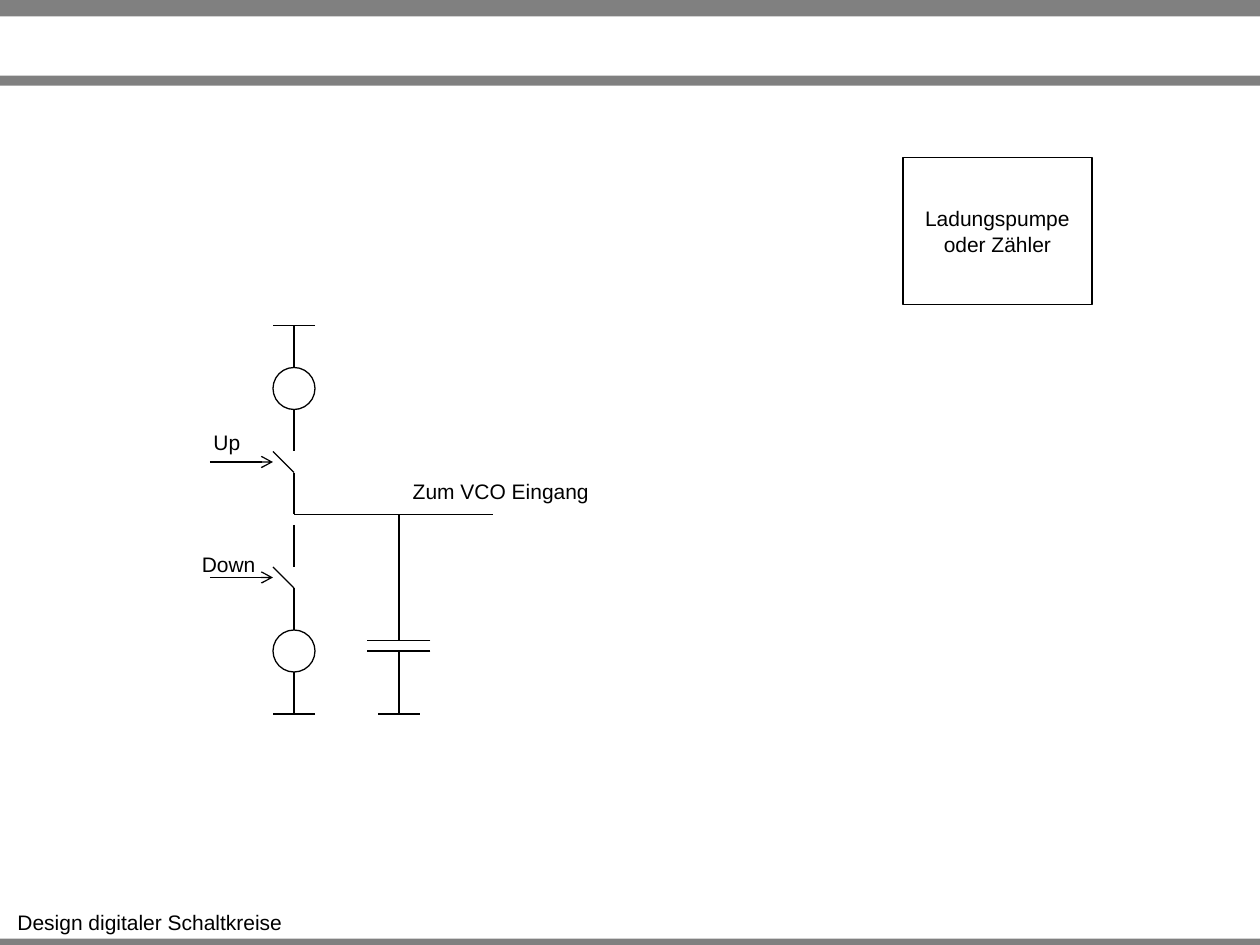
from typing import NamedTuple

from pptx import Presentation
from pptx.dml.color import RGBColor
from pptx.enum.shapes import MSO_CONNECTOR, MSO_SHAPE as Preset
from pptx.enum.text import MSO_ANCHOR, MSO_AUTO_SIZE, PP_ALIGN
from pptx.oxml.ns import qn
from pptx.util import Inches, Pt

UNIT = 1 / 12  # grid step in inches
BLACK, GRAY = "000000", "808080"


class Wire(NamedTuple):
    x1: float
    y1: float
    x2: float
    y2: float
    arrow: bool = False


class Label(NamedTuple):
    text: str
    left: float  # inches
    top: float
    width: float


def color(hex_value: str) -> RGBColor:
    return RGBColor.from_string(hex_value)


def grid(steps: float) -> int:
    return Inches(steps * UNIT)


def write(shape, text: str) -> None:
    shape.text_frame.text = text
    for paragraph in shape.text_frame.paragraphs:
        paragraph.alignment = PP_ALIGN.CENTER
        font = paragraph.runs[0].font
        font.name, font.size = "Arial", Pt(12)
        font.color.rgb = color(BLACK)


def draw_bar(slide, top: float, height: float) -> None:
    bar = slide.shapes.add_shape(
        Preset.RECTANGLE, 0, Inches(top), Inches(10), Inches(height))
    bar.shadow.inherit = False
    bar.fill.solid()
    bar.fill.fore_color.rgb = color(GRAY)
    bar.line.fill.background()


def draw_outline(slide, preset, col: float, row: float, cols: float, rows: float):
    outline = slide.shapes.add_shape(
        preset, grid(col), grid(row), grid(cols), grid(rows))
    outline.shadow.inherit = False
    outline.fill.background()
    outline.line.color.rgb = color(BLACK)
    outline.line.width = Pt(0.75)
    return outline


def draw_wire(slide, wire: Wire) -> None:
    line = slide.shapes.add_connector(
        MSO_CONNECTOR.STRAIGHT, *(grid(steps) for steps in wire[:4]))
    line.line.color.rgb = color(BLACK)
    line.line.width = Pt(0.75)
    properties = line._element.spPr
    if wire.arrow:
        head = properties.find(qn("a:ln")).makeelement(qn("a:tailEnd"), {"type": "arrow"})
        properties.find(qn("a:ln")).append(head)
    properties.append(properties.makeelement(qn("a:effectLst"), {}))


def draw_label(slide, label: Label) -> None:
    box = slide.shapes.add_textbox(
        Inches(label.left), Inches(label.top), Inches(label.width), Inches(0.3))
    box.text_frame.word_wrap = False
    box.text_frame.auto_size = MSO_AUTO_SIZE.SHAPE_TO_FIT_TEXT
    write(box, label.text)


def draw_switch(slide, row: float, control_row: float) -> None:
    """Two contacts, the open blade and the control arrow."""
    for wire in (
        Wire(BRANCH, row, BRANCH, row + 4),
        Wire(BRANCH, row + 6, BRANCH - 2, row + 4),
        Wire(BRANCH, row + 6, BRANCH, row + 10),
        Wire(20, control_row, BRANCH - 2, control_row, arrow=True),
    ):
        draw_wire(slide, wire)


def draw_source(slide, row: float, rail_row: float) -> None:
    """Current source with its lead to a supply rail."""
    draw_outline(slide, Preset.OVAL, BRANCH - 2, row, 4, 4)
    lead_row = row if rail_row < row else row + 4
    draw_wire(slide, Wire(BRANCH, lead_row, BRANCH, rail_row))
    draw_wire(slide, Wire(BRANCH + 2, rail_row, BRANCH - 2, rail_row))


# Columns and rows of the circuit
BRANCH, CAPACITOR = 28, 38
SUPPLY, OUTPUT, GROUND = 31, 49, 68

CAPACITOR_WIRES = [
    Wire(BRANCH, OUTPUT, 47, OUTPUT),
    Wire(CAPACITOR, OUTPUT, CAPACITOR, 61),
    Wire(CAPACITOR + 3, 61, CAPACITOR - 3, 61),
    Wire(CAPACITOR + 3, 62, CAPACITOR - 3, 62),
    Wire(CAPACITOR, 62, CAPACITOR, GROUND),
    Wire(CAPACITOR + 2, GROUND, CAPACITOR - 2, GROUND),
]

LABELS = [
    Label("Design digitaler Schaltkreise", 0.03, 7.17, 2.32),
    Label("Zum VCO Eingang", 3.17, 3.75, 1.61),
    Label("Up", 1.59, 3.36, 0.42),
    Label("Down", 1.5, 4.33, 0.63),
]


def main() -> None:
    deck = Presentation()
    deck.slide_width, deck.slide_height = Inches(10), Inches(7.5)
    slide = deck.slides.add_slide(deck.slide_layouts[6])

    # Page frame
    for top, height in ((7.45, 0.08), (0, 0.13), (0.6, 0.08)):
        draw_bar(slide, top, height)

    # Block symbol
    block = draw_outline(slide, Preset.RECTANGLE, 86, 15, 18, 14)
    block.text_frame.word_wrap = True
    block.text_frame.vertical_anchor = MSO_ANCHOR.MIDDLE
    write(block, "Ladungspumpe oder Zähler")

    # Charge pump: sources, switches, capacitor
    draw_source(slide, 35, SUPPLY)
    draw_switch(slide, 39, 44)
    draw_switch(slide, 50, 55)
    draw_source(slide, 60, GROUND)
    for wire in CAPACITOR_WIRES:
        draw_wire(slide, wire)

    for label in LABELS:
        draw_label(slide, label)

    deck.save("out.pptx")


if __name__ == "__main__":
    main()
